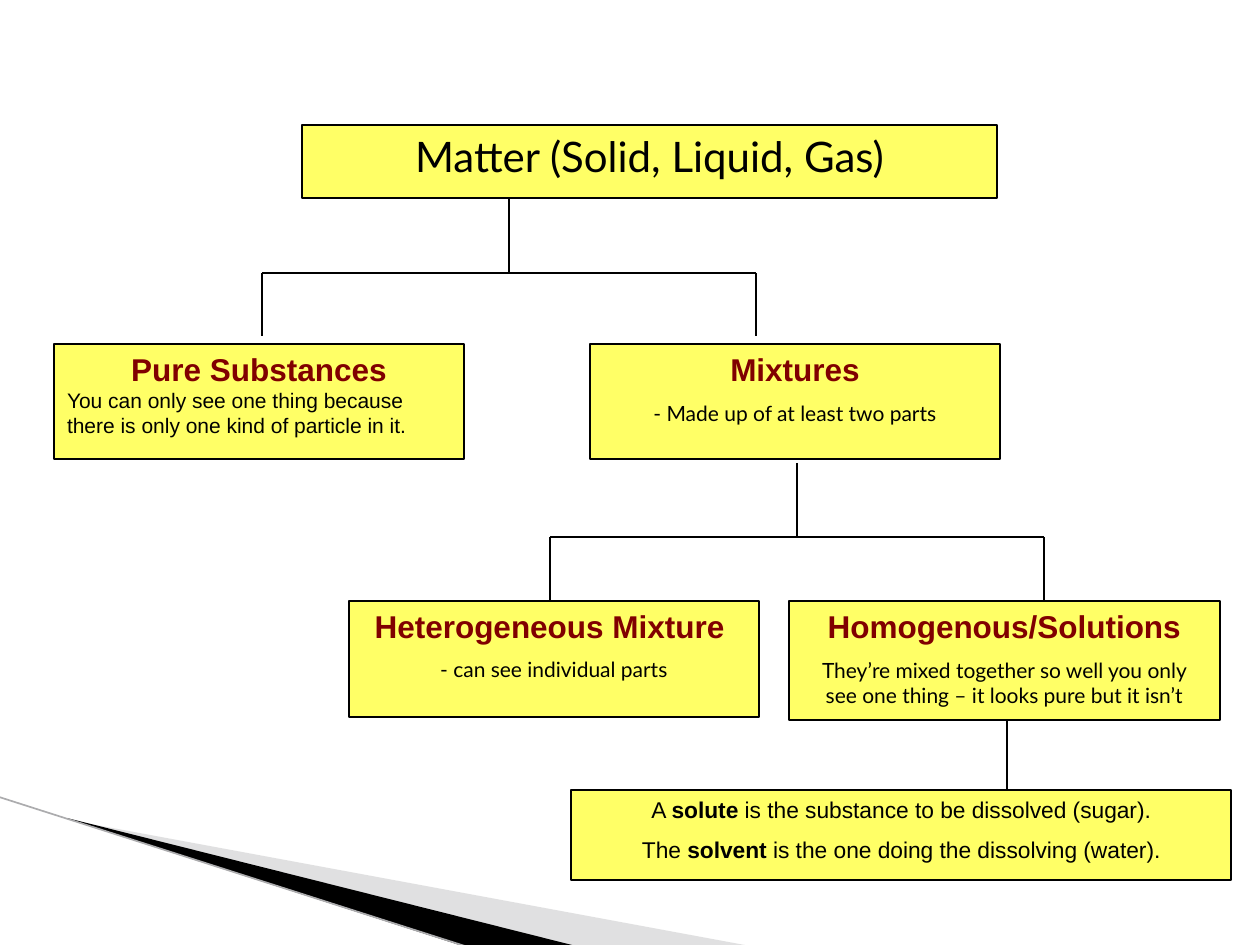
from lxml import etree
from pptx import Presentation
from pptx.dml.color import RGBColor
from pptx.enum.shapes import MSO_CONNECTOR, MSO_SHAPE
from pptx.enum.text import MSO_ANCHOR, PP_ALIGN
from pptx.oxml.ns import qn
from pptx.util import Emu, Pt

RECTANGLE = MSO_SHAPE.RECTANGLE
STRAIGHT = MSO_CONNECTOR.STRAIGHT
TOP = MSO_ANCHOR.TOP
LEFT, CENTER = PP_ALIGN.LEFT, PP_ALIGN.CENTER

PX = 914400 / 126
COLORS = {"box": "FFFF66", "ink": "000000", "heading": "800000",
          "wedge": "B3B3B5", "edge": "ACACAE"}

# Paragraph styles: font, size, bold, colour, alignment, space before
STYLES = {
    "root": ("Lato", 24, False, "ink", CENTER, 0),
    "heading": ("Arial", 18, True, "heading", CENTER, 0),
    "detail": ("Lato", 12, False, "ink", CENTER, 7),
    "plain": ("Arial", 12, False, "ink", LEFT, 0),
    "term": ("Arial", 13, False, "ink", CENTER, 0),
    "next term": ("Arial", 13, False, "ink", CENTER, 7),
}

# Boxes: (left, top, width, height), side inset, paragraphs of (style, runs);
# every second run is bold
BOXES = [
    ((302, 125, 695, 73), 13, [("root", ["Matter (Solid, Liquid, Gas)"])]),
    ((54, 344, 410, 115), 13, [
        ("heading", ["Pure Substances"]),
        ("plain", ["You can only see one thing because there is only one "
                   "kind of particle in it."])]),
    ((590, 344, 410, 115), 13, [
        ("heading", ["Mixtures"]),
        ("detail", ["- Made up of at least two parts"])]),
    ((349, 601, 410, 116), 13, [
        ("heading", ["Heterogeneous Mixture "]),
        ("detail", ["- can see individual parts"])]),
    ((789, 601, 431, 119), 23, [
        ("heading", ["Homogenous/Solutions"]),
        ("detail", ["They’re mixed together so well you only see one thing "
                    "– it looks pure but it isn’t"])]),
    ((571, 790, 660, 90), 29, [
        ("term", ["A ", "solute", " is the substance to be dissolved (sugar)."]),
        ("next term", ["The ", "solvent",
                       " is the one doing the dissolving (water)."])]),
]

# Branches: centre x and top y of the stem
BRANCHES = [(509, 199), (797, 463)]
STEM, DROP, HALF_SPAN = 74, 63, 247

# Corner decoration: colour, opacity in percent, points
WEDGES = [
    ("wedge", 40, [(69, 820), (750, 946), (575, 946), (69, 819)]),
    ("ink", 100, [(67, 818), (576, 946), (469, 948), (68, 819)]),
]


def px(value):
    return Emu(round(value * PX))


def color(name):
    return RGBColor.from_string(COLORS[name])


def add_line(slide, x1, y1, x2, y2, width=1.5, name="ink"):
    line = slide.shapes.add_connector(STRAIGHT, px(x1), px(y1), px(x2), px(y2))
    line.line.color.rgb = color(name)
    line.line.width = Pt(width)
    etree.SubElement(line._element.spPr, qn("a:effectLst"))


def add_wedge(slide, name, opacity, points):
    builder = slide.shapes.build_freeform(*points[0], scale=PX)
    builder.add_line_segments(points[1:], close=True)
    wedge = builder.convert_to_shape()
    wedge.shadow.inherit = False
    wedge.fill.solid()
    wedge.fill.fore_color.rgb = color(name)
    wedge.line.fill.background()
    if opacity < 100:
        fill_color = wedge._element.spPr.find(".//" + qn("a:srgbClr"))
        etree.SubElement(fill_color, qn("a:alpha"), val=str(opacity * 1000))


def add_box(slide, bounds, inset, paragraphs):
    box = slide.shapes.add_shape(RECTANGLE, *map(px, bounds))
    box.shadow.inherit = False
    box.fill.solid()
    box.fill.fore_color.rgb = color("box")
    box.line.color.rgb = color("ink")
    box.line.width = Pt(1.5)
    frame = box.text_frame
    frame.word_wrap = True
    frame.vertical_anchor = TOP
    frame.margin_left = frame.margin_right = px(inset)
    frame.margin_top = frame.margin_bottom = px(6)
    for index, (style, runs) in enumerate(paragraphs):
        paragraph = frame.add_paragraph() if index else frame.paragraphs[0]
        font, size, bold, ink, alignment, before = STYLES[style]
        paragraph.alignment = alignment
        paragraph.space_before = Pt(before)
        paragraph.font.name = font
        paragraph.font.size = Pt(size)
        paragraph.font.color.rgb = color(ink)
        for position, text in enumerate(runs):
            run = paragraph.add_run()
            run.text = text
            run.font.bold = bold or position % 2 == 1


def add_branch(slide, x, top):
    bar = top + STEM
    left, right = x - HALF_SPAN, x + HALF_SPAN
    add_line(slide, x, top, x, bar)
    add_line(slide, left, bar, right, bar)
    for end in (left, right):
        add_line(slide, end, bar, end, bar + DROP)


def main():
    presentation = Presentation()
    presentation.slide_width, presentation.slide_height = px(1260), px(945)
    slide = presentation.slides.add_slide(presentation.slide_layouts[6])

    # Corner decoration
    for wedge in WEDGES:
        add_wedge(slide, *wedge)
    add_line(slide, -1, 797, 468, 947, 0.95, "edge")

    # Classification tree
    for box in BOXES:
        add_box(slide, *box)
    for branch in BRANCHES:
        add_branch(slide, *branch)
    add_line(slide, 1007, 721, 1007, 790, 0.75)

    presentation.save("out.pptx")


if __name__ == "__main__":
    main()
